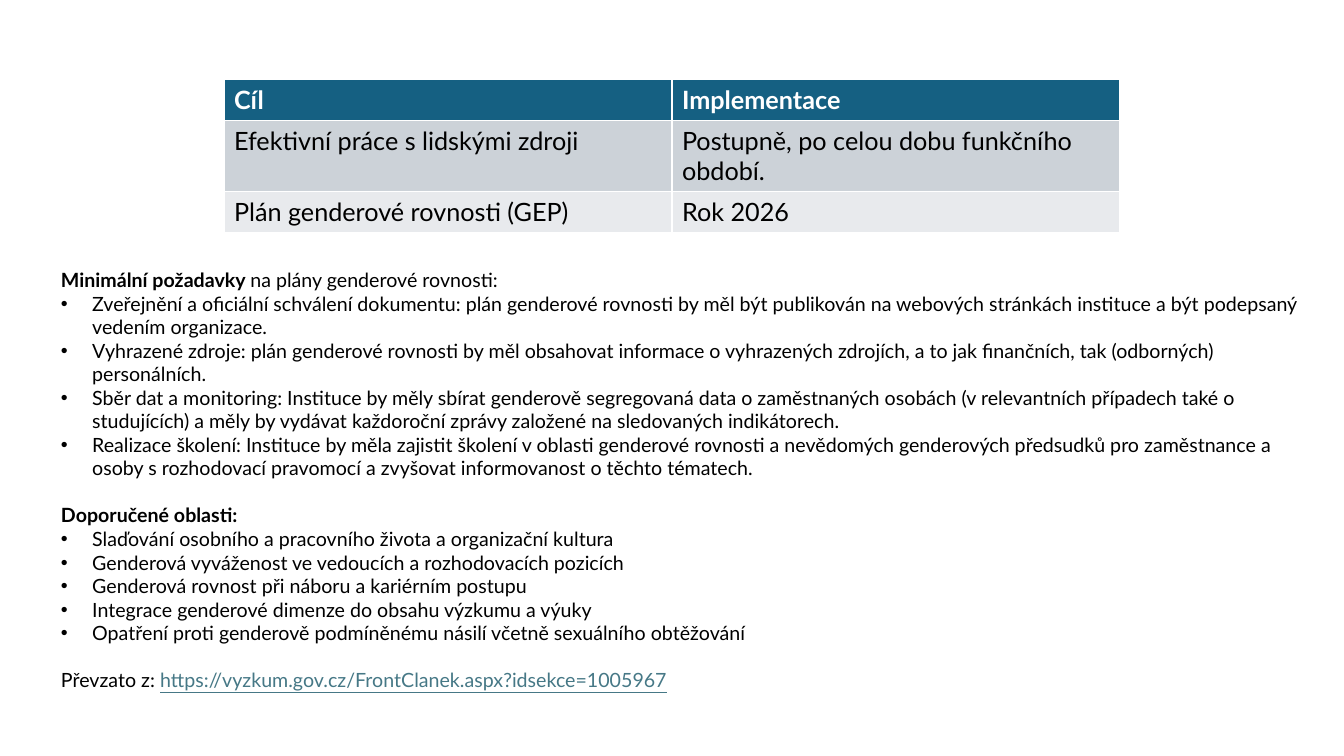
from lxml import etree
from pptx import Presentation
from pptx.dml.color import RGBColor
from pptx.enum.text import MSO_AUTO_SIZE
from pptx.oxml.ns import qn
from pptx.util import Inches, Pt

FIT_SHAPE = MSO_AUTO_SIZE.SHAPE_TO_FIT_TEXT
WHITE = RGBColor(0xFF, 0xFF, 0xFF)
BLACK = RGBColor(0x00, 0x00, 0x00)
HEADER = RGBColor(0x15, 0x60, 0x82)
BAND_DARK = RGBColor(0xCC, 0xD2, 0xD8)
BAND_LIGHT = RGBColor(0xE8, 0xEA, 0xED)
LINK = RGBColor(0x46, 0x78, 0x86)

SLIDE_W, SLIDE_H = Inches(13.333), Inches(7.5)
ROW_H = Inches(0.41)
INDENT = Inches(0.31)
SECTION_GAP = Pt(16.8)

CELL = {"name": "Lato", "size": Pt(18), "bold": False}
BODY = {"name": "Lato", "size": Pt(14), "bold": False}
BOLD = {**BODY, "bold": True}
URL = {**BODY, "underline": True}

GOALS = [
    ("Cíl", "Implementace"),
    ("Efektivní práce s lidskými zdroji", "Postupně, po celou dobu funkčního období."),
    ("Plán genderové rovnosti (GEP)", "Rok 2026"),
]
ROW_STYLES = [
    (HEADER, WHITE, {**CELL, "bold": True}),
    (BAND_DARK, BLACK, CELL),
    (BAND_LIGHT, BLACK, CELL),
]
REQUIREMENTS = [
    "Zveřejnění a oficiální schválení dokumentu: plán genderové rovnosti by měl být "
    "publikován na webových stránkách instituce a být podepsaný vedením organizace.",
    "Vyhrazené zdroje: plán genderové rovnosti by měl obsahovat informace o vyhrazených "
    "zdrojích, a to jak finančních, tak (odborných) personálních.",
    "Sběr dat a monitoring: Instituce by měly sbírat genderově segregovaná data o "
    "zaměstnaných osobách (v relevantních případech také o studujících) a měly by vydávat "
    "každoroční zprávy založené na sledovaných indikátorech.",
    "Realizace školení: Instituce by měla zajistit školení v oblasti genderové rovnosti a "
    "nevědomých genderových předsudků pro zaměstnance a osoby s rozhodovací pravomocí a "
    "zvyšovat informovanost o těchto tématech.",
]
AREAS = [
    "Slaďování osobního a pracovního života a organizační kultura",
    "Genderová vyváženost ve vedoucích a rozhodovacích pozicích",
    "Genderová rovnost při náboru a kariérním postupu",
    "Integrace genderové dimenze do obsahu výzkumu a výuky",
    "Opatření proti genderově podmíněnému násilí včetně sexuálního obtěžování",
]


def box(left, top, width, height):
    return (int(SLIDE_W * left), int(SLIDE_H * top),
            int(SLIDE_W * width), int(SLIDE_H * height))


def add_run(p, text, fmt, color=BLACK):
    r = p.add_run()
    r.text = text
    for name, value in fmt.items():
        setattr(r.font, name, value)
    r.font.color.rgb = color


def add_line(tf, runs, gap=0):
    p = tf.add_paragraph() if tf.paragraphs[0].runs else tf.paragraphs[0]
    p.space_before = gap
    for run in runs:
        add_run(p, *run)
    return p


def add_bullets(tf, items):
    for item in items:
        p = add_line(tf, [(item, BODY)])
        pPr = p._p.get_or_add_pPr()
        pPr.set("marL", str(INDENT))
        pPr.set("indent", str(-INDENT))
        etree.SubElement(pPr, qn("a:buFont")).set("typeface", "Arial")
        etree.SubElement(pPr, qn("a:buChar")).set("char", "•")


def add_goals(s):
    left, top, width, _ = box(1 / 6, 0.105, 2 / 3, 0)
    frame = s.shapes.add_table(len(GOALS), 2, left, top, width, ROW_H * len(GOALS))
    for row, texts, (fill, color, fmt) in zip(frame.table.rows, GOALS, ROW_STYLES):
        row.height = ROW_H
        for cell, text in zip(row.cells, texts):
            cell.fill.solid()
            cell.fill.fore_color.rgb = fill
            add_run(cell.text_frame.paragraphs[0], text, fmt, color)


def add_plan(s):
    tf = s.shapes.add_textbox(*box(0.038, 0.348, 0.952, 0.548)).text_frame
    tf.word_wrap = True
    tf.auto_size = FIT_SHAPE
    add_line(tf, [("Minimální požadavky ", BOLD), ("na plány genderové rovnosti:", BODY)])
    add_bullets(tf, REQUIREMENTS)
    add_line(tf, [("Doporučené oblasti:", BOLD)], SECTION_GAP)
    add_bullets(tf, AREAS)
    add_line(tf, [("Převzato z: ", BODY),
                  ("https://vyzkum.gov.cz/FrontClanek.aspx?idsekce=1005967", URL, LINK)],
             SECTION_GAP)


def main():
    prs = Presentation()
    prs.slide_width, prs.slide_height = SLIDE_W, SLIDE_H
    s = prs.slides.add_slide(prs.slide_layouts[6])
    add_goals(s)
    add_plan(s)
    prs.save("out.pptx")


if __name__ == "__main__":
    main()
